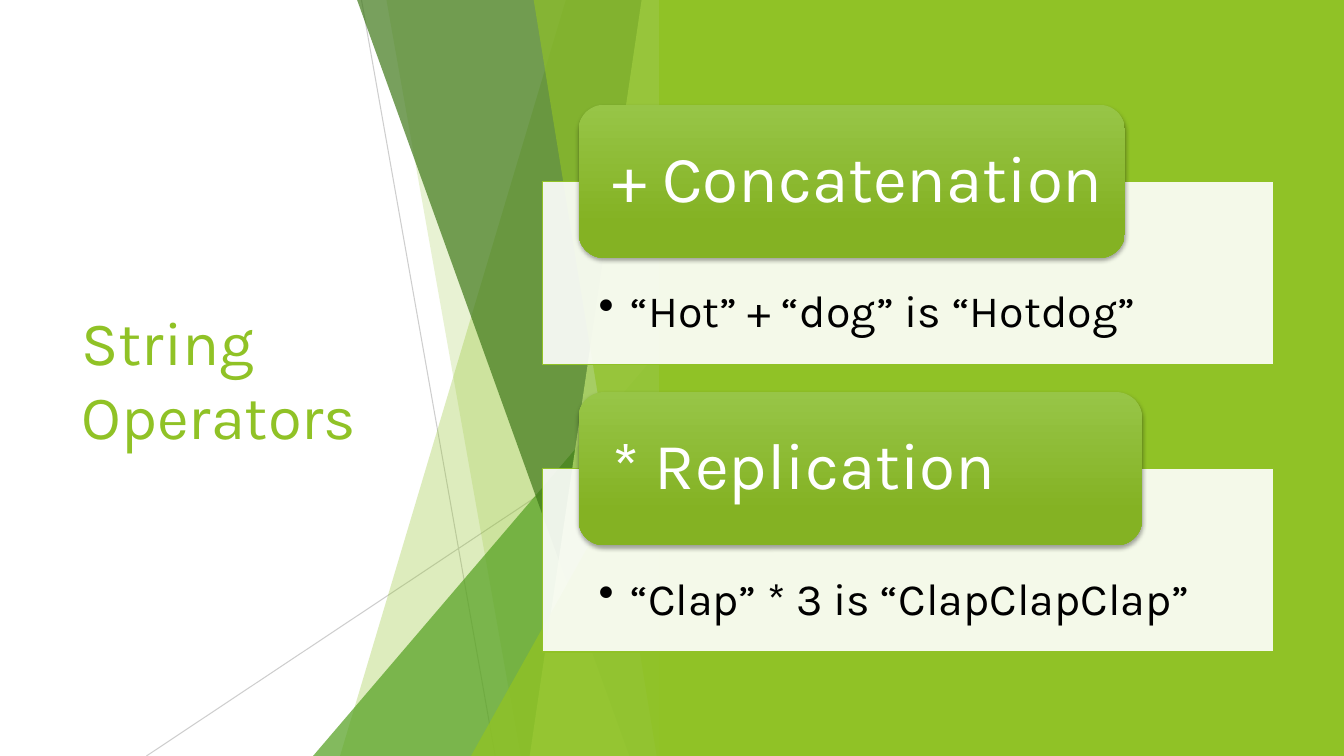
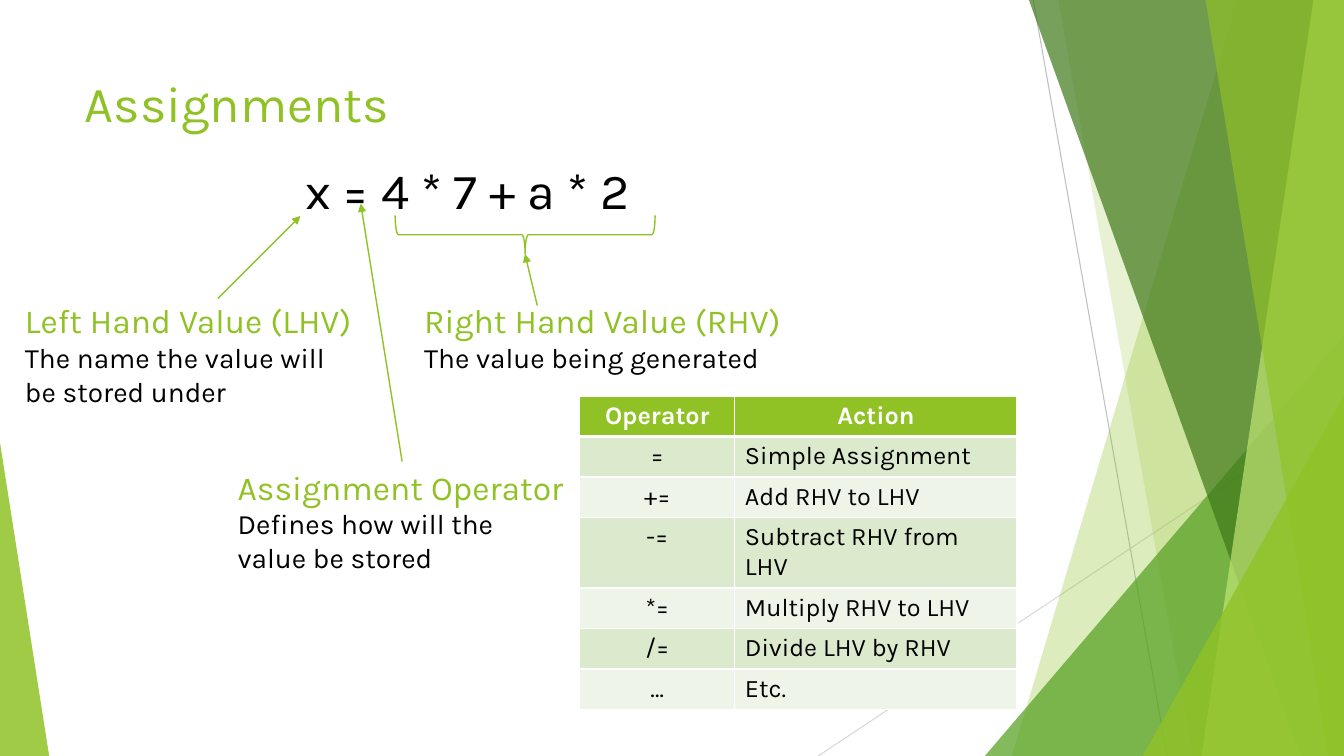
from lxml import etree
from pptx import Presentation
from pptx.dml.color import RGBColor as RGB
from pptx.enum.shapes import MSO_CONNECTOR as CONN, MSO_SHAPE as SHAPE
from pptx.enum.text import MSO_ANCHOR as ANCHOR, MSO_AUTO_SIZE as AUTO, PP_ALIGN as ALIGN
from pptx.oxml.ns import qn
from pptx.util import Cm, Pt

COLORS = {
    "lime": "90C226", "green": "54A021", "forest": "3F7819", "pale": "C0E474",
    "card_top": "97C547", "card_bottom": "84B223", "band": "DBE9CD", "light": "EEF4E8",
    "white": "FFFFFF", "black": "000000", "gray": "BFBFBF", "silver": "D9D9D9", "mist": "CECECE",
}
FONT = "Karla"
W, H = 33.87, 19.05
HALF = 16.93


def paint(sp, color, alpha=100):
    sp.shadow.inherit = False
    sp.fill.solid()
    sp.fill.fore_color.rgb = RGB.from_string(COLORS[color])
    sp.line.fill.background()
    if alpha < 100:
        clr = sp.fill._xPr.find(qn("a:solidFill"))[0]
        etree.SubElement(clr, qn("a:alpha"), val=str(alpha * 1000))


def add_run(p, text, size, color, bold=False):
    r = p.add_run()
    r.text = text
    r.font.name = FONT
    r.font.size = Pt(size)
    r.font.bold = bold
    r.font.color.rgb = RGB.from_string(COLORS[color])


prs = Presentation()
prs.slide_width, prs.slide_height = Cm(W), Cm(H)
layout = prs.slide_layouts[5]
strings = prs.slides.add_slide(layout)
assigns = prs.slides.add_slide(layout)
lines = []

titles = [
    (strings, "String Operators", 44, ANCHOR.MIDDLE, (1.8, 3.84, 9.86, 11.38)),
    (assigns, "Assignments", 36, ANCHOR.TOP, (1.88, 1.7, 23.88, 3.66)),
]
for s, text, size, anchor, box in titles:
    sp = s.shapes.title
    sp.left, sp.top, sp.width, sp.height = [Cm(v) for v in box]
    tf = sp.text_frame
    tf.auto_size = AUTO.NONE
    tf.vertical_anchor = anchor
    p = tf.paragraphs[0]
    p.alignment = ALIGN.LEFT
    add_run(p, text, size, "lime")

rays = [(26.04, 0, 29.41, H), (W, 10.24, 20.62, H)]
facets = [
    ("lime", 30, 31.19, 0, 25.5),
    ("lime", 20, 26.67, 0, 30.05),
    ("green", 72, W, 8.46, 24.82),
    ("forest", 70, 25.93, 0, 32.79),
    ("pale", 70, 33.1, 0, 30.28),
    ("lime", 65, 30.38, 0, 33.48),
    ("lime", 80, W, 9.98, 28.8),
]
for s, dx, ray_colors in [(strings, -HALF, ("mist", "mist")), (assigns, 0, ("gray", "silver"))]:
    grp = s.shapes.add_group_shape().shapes
    for (x1, y1, x2, y2), color in zip(rays, ray_colors):
        c = grp.add_connector(CONN.STRAIGHT, Cm(x1 + dx), Cm(y1), Cm(x2 + dx), Cm(y2))
        c.line.width = Pt(0.75)
        c.line.color.rgb = RGB.from_string(COLORS[color])
        lines.append(c)
    for color, alpha, x_top, y_top, x_bottom in facets:
        if y_top:
            sp = grp.add_shape(SHAPE.ISOSCELES_TRIANGLE, Cm(x_bottom + dx), Cm(y_top),
                               Cm(W - x_bottom), Cm(H - y_top))
            sp.adjustments[0] = 1
        else:
            fb = grp.build_freeform(Cm(x_top + dx), 0)
            fb.add_line_segments([(Cm(x + dx), Cm(y)) for x, y in [(W, 0), (W, H), (x_bottom, H)]])
            sp = fb.convert_to_shape()
        paint(sp, color, alpha)

sp = strings.shapes.add_shape(SHAPE.RECTANGLE, Cm(16.61), 0, Cm(W - 16.61), Cm(H))
paint(sp, "lime")

cards = [
    (4.57, 13.77, "+ Concatenation", "“Hot” + “dog” is “Hotdog”"),
    (11.81, 14.2, "* Replication", "“Clap” * 3 is “ClapClapClap”"),
]
for y, width, head, example in cards:
    sp = strings.shapes.add_shape(SHAPE.RECTANGLE, Cm(13.67), Cm(y), Cm(18.42), Cm(4.62))
    paint(sp, "white", 90)
    sp.line.width = Pt(1)
    sp.line.color.rgb = RGB.from_string(COLORS["lime"])
    tf = sp.text_frame
    tf.vertical_anchor = ANCHOR.TOP
    tf.margin_left = tf.margin_right = Cm(1.42)
    tf.margin_top, tf.margin_bottom = Cm(2.72), Cm(0.64)
    p = tf.paragraphs[0]
    p.alignment = ALIGN.LEFT
    p.line_spacing = 0.9
    pPr = p._p.get_or_add_pPr()
    pPr.set("marL", str(Cm(0.79)))
    pPr.set("indent", str(-Cm(0.79)))
    etree.SubElement(pPr, qn("a:buChar"), char="•")
    add_run(p, example, 32, "black")

    sp = strings.shapes.add_shape(SHAPE.ROUNDED_RECTANGLE, Cm(14.58), Cm(y - 1.93), Cm(width), Cm(3.86))
    paint(sp, "lime")
    sp.fill.gradient()
    sp.fill.gradient_angle = 270
    for stop, color, pos in zip(sp.fill.gradient_stops, ("card_top", "card_bottom"), (0, 0.78)):
        stop.color.rgb = RGB.from_string(COLORS[color])
        stop.position = pos
    effects = sp._element.spPr.find(qn("a:effectLst"))
    shadow = etree.SubElement(effects, qn("a:outerShdw"), blurRad=str(Pt(3)), dist=str(Pt(2)),
                              dir="5400000", rotWithShape="0")
    clr = etree.SubElement(shadow, qn("a:srgbClr"), val=COLORS["black"])
    etree.SubElement(clr, qn("a:alpha"), val="35000")
    tf = sp.text_frame
    tf.vertical_anchor = ANCHOR.MIDDLE
    tf.margin_left, tf.margin_right = Cm(0.66), Cm(0.3)
    p = tf.paragraphs[0]
    p.alignment = ALIGN.LEFT
    p.line_spacing = 0.9
    add_run(p, head, 47, "white")

sp = assigns.shapes.add_shape(SHAPE.ISOSCELES_TRIANGLE, 0, Cm(11.15), Cm(1.24), Cm(7.9))
sp.adjustments[0] = 0
paint(sp, "lime", 85)

notes = [
    ((7.44, 3.89, 9.4, 1.8), [("x = 4 * 7 + a * 2", 36, "black")]),
    ((0.38, 7.44, 8.99, 3), [("Left Hand Value (LHV)", 24, "lime"),
                             ("The name the value will be stored under", 20, "black")]),
    ((10.44, 7.44, 9.6, 2.13), [("Right Hand Value (RHV)", 24, "lime"),
                                ("The value being generated", 20, "black")]),
    ((5.74, 11.63, 8.79, 3), [("Assignment Operator", 24, "lime"),
                              ("Defines how will the value be stored", 20, "black")]),
]
for box, paragraphs in notes:
    label = assigns.shapes.add_textbox(*[Cm(v) for v in box])
    tf = label.text_frame
    tf.word_wrap = True
    tf.auto_size = AUTO.SHAPE_TO_FIT_TEXT
    for i, (text, size, color) in enumerate(paragraphs):
        p = tf.add_paragraph() if i else tf.paragraphs[0]
        add_run(p, text, size, color)

sp = assigns.shapes.add_shape(SHAPE.LEFT_BRACE, Cm(12.75), Cm(2.64), Cm(0.97), Cm(6.55))
sp.rotation = 270
sp.shadow.inherit = False
sp.fill.background()
sp.line.width = Pt(1)
sp.line.color.rgb = RGB.from_string(COLORS["lime"])

arrows = [(5.49, 7.52, 7.57, 5.44), (13.54, 7.7, 13.23, 6.4), (10.13, 11.63, 9.09, 5.13)]
for ends in arrows:
    c = assigns.shapes.add_connector(CONN.STRAIGHT, *[Cm(v) for v in ends])
    c.line.width = Pt(1)
    c.line.color.rgb = RGB.from_string(COLORS["lime"])
    etree.SubElement(c.line._get_or_add_ln(), qn("a:tailEnd"), type="triangle")
    lines.append(c)
c.begin_connect(label, 0)

for c in lines:
    etree.SubElement(c._element.spPr, qn("a:effectLst"))

rows = [
    ("Operator", "Action"),
    ("=", "Simple Assignment"),
    ("+=", "Add RHV to LHV"),
    ("-=", "Subtract RHV from LHV"),
    ("*=", "Multiply RHV to LHV"),
    ("/=", "Divide LHV by RHV"),
    ("…", "Etc."),
]
widths = (3.91, 7.11)
row_h = 1.02
table = assigns.shapes.add_table(len(rows), 2, Cm(14.61), Cm(9.98),
                                 Cm(sum(widths)), Cm(row_h * len(rows))).table
for col, width in zip(table.columns, widths):
    col.width = Cm(width)
for i, row in enumerate(rows):
    table.rows[i].height = Cm(row_h)
    for j, text in enumerate(row):
        cell = table.cell(i, j)
        tcPr = cell._tc.get_or_add_tcPr()
        for side in "LRTB":
            weight = 3 if (side, i) in (("B", 0), ("T", 1)) else 1
            ln = etree.SubElement(tcPr, qn("a:ln" + side), w=str(Pt(weight)))
            fill = etree.SubElement(ln, qn("a:solidFill"))
            etree.SubElement(fill, qn("a:srgbClr"), val=COLORS["white"])
        cell.fill.solid()
        color = "lime" if i == 0 else "band" if i % 2 else "light"
        cell.fill.fore_color.rgb = RGB.from_string(COLORS[color])
        p = cell.text_frame.paragraphs[0]
        p.alignment = ALIGN.CENTER if i == 0 or j == 0 else ALIGN.LEFT
        add_run(p, text, 18, "black" if i else "white", i == 0)

prs.save("out.pptx")
